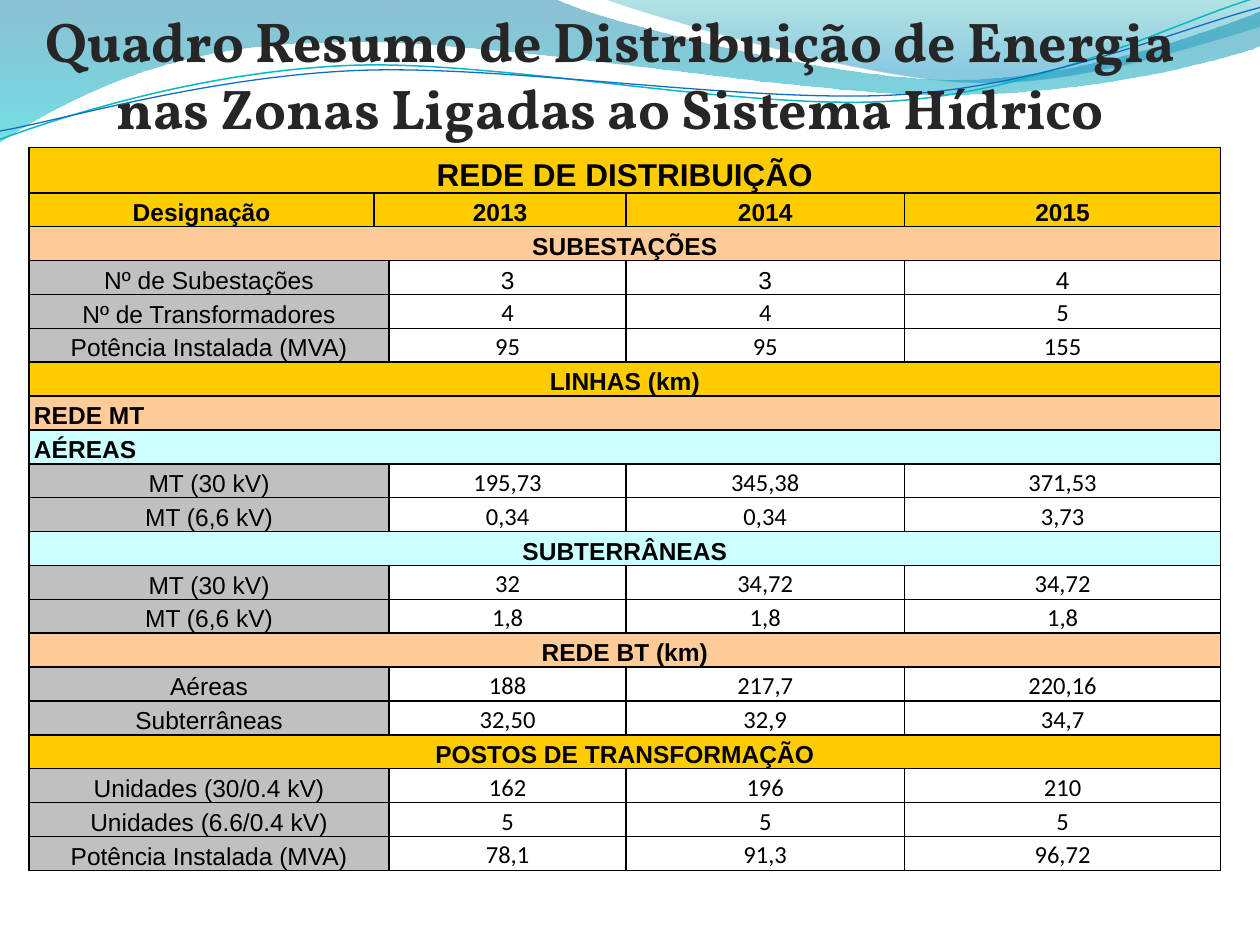
from lxml.etree import SubElement
from pptx import Presentation
from pptx.dml.color import RGBColor
from pptx.enum.text import MSO_ANCHOR, MSO_AUTO_SIZE, PP_ALIGN
from pptx.oxml.ns import qn
from pptx.util import Inches, Pt

WIDE, HIGH = 10, 7.5
HEX = {
    "gold": "FFCC00", "peach": "FFCC99", "aqua": "CCFFFF", "gray": "C0C0C0",
    "white": "FFFFFF", "black": "000000", "ink": "262626",
    "sea": "0074A1", "cyan": "00C6CF", "teal": "00A1A9", "blue": "008BBF",
    "line": "0AB8BF", "deep": "0F6FC6",
}
TITLE = "Quadro Resumo de Distribuição de Energia nas Zonas Ligadas ao Sistema Hídrico"
ROWS = [
    ("gold", "REDE DE DISTRIBUIÇÃO"),
    ("head", "Designação", "2013", "2014", "2015"),
    ("peach", "SUBESTAÇÕES"),
    ("data", "Nº de Subestações", "3", "3", "4"),
    ("data", "Nº de Transformadores", "4", "4", "5"),
    ("data", "Potência Instalada (MVA)", "95", "95", "155"),
    ("gold", "LINHAS (km)"),
    ("peach", "REDE MT"),
    ("aqua", "AÉREAS"),
    ("data", "MT (30 kV)", "195,73", "345,38", "371,53"),
    ("data", "MT (6,6 kV)", "0,34", "0,34", "3,73"),
    ("aqua", "SUBTERRÂNEAS"),
    ("data", "MT (30 kV)", "32", "34,72", "34,72"),
    ("data", "MT (6,6 kV)", "1,8", "1,8", "1,8"),
    ("peach", "REDE BT (km)"),
    ("data", "Aéreas", "188", "217,7", "220,16"),
    ("data", "Subterrâneas", "32,50", "32,9", "34,7"),
    ("gold", "POSTOS DE TRANSFORMAÇÃO"),
    ("data", "Unidades (30/0.4 kV)", "162", "196", "210"),
    ("data", "Unidades (6.6/0.4 kV)", "5", "5", "5"),
    ("data", "Potência Instalada (MVA)", "78,1", "91,3", "96,72"),
]
LEFT = ("REDE MT", "AÉREAS")
COLS = [2.74, 0.11, 1.88, 2.21, 2.51]
BOX = (0.23, 1.17, sum(COLS), 5.74)
TOP = 0.36
SPACE = {"Arial": 1.15, "Calibri": 1.13}
BANDS = [
    ([(0, -0.01), (4.4, -0.01),
      (4.76, 0.17, 6.64, 0.63, 7.58, 0.63), (8.53, 0.63, 9.58, 0.26, 10, 0.09),
      (10.01, 0.36),
      (9.83, 0.44, 8.7, 0.76, 7.46, 0.75), (6.22, 0.75, 3.82, 0.28, 2.57, 0.34),
      (1.29, 0.35, 0.46, 0.83, -0.01, 1.13)],
     [(0, "sea", 45), (1, "cyan", 55)]),
    ([(4.79, -0.01),
      (5.09, 0.11, 6.82, 0.62, 7.69, 0.65), (8.56, 0.69, 9.61, 0.32, 10, 0.21),
      (10, 0)],
     [(0, "teal", 30), (0.8, "blue", 45)]),
]
WAVES = [
    ([(-0.01, 1.11), (0.48, 0.93, 1.58, 0.57, 2.77, 0.52),
      (3.95, 0.47, 5.93, 0.89, 7.13, 0.8), (8.33, 0.71, 9.38, 0.15, 9.98, -0.02)],
     "line", 0.85),
    ([(0, 1.04), (0.47, 0.96, 1.64, 0.61, 2.83, 0.56),
      (4.03, 0.51, 5.97, 0.83, 7.17, 0.75), (8.36, 0.67, 9.41, 0.21, 10, 0.06)],
     "deep", 0.75),
]
UNIT = 100


def draw(slide, path, close):
    dots = [(round(part[i] * UNIT), round(part[i + 1] * UNIT))
            for part in path for i in range(0, len(part), 2)]
    pen = slide.shapes.build_freeform(*dots[0], scale=Inches(1) / UNIT)
    pen.add_line_segments(dots[1:], close=close)
    shape = pen.convert_to_shape()
    shape.shadow.inherit = False
    lines = iter(list(shape.element.iter(qn("a:lnTo"))))
    for part in path[1:]:
        first = next(lines)
        if len(part) == 6:
            curve = first.makeelement(qn("a:cubicBezTo"))
            first.addprevious(curve)
            for line in (first, next(lines), next(lines)):
                curve.append(line[0])
                line.getparent().remove(line)
    return shape


def tint(name):
    return RGBColor.from_string(HEX[name])


def shade(shape, stops):
    shape.line.fill.background()
    shape.fill.gradient()
    shape.fill.gradient_angle = 270
    for stop, (place, name, solid) in zip(shape.fill.gradient_stops, stops):
        stop.position = place
        stop.color.rgb = tint(name)
    tones = shape.element.spPr.iter(qn("a:srgbClr"))
    for tone, (place, name, solid) in zip(tones, stops):
        SubElement(tone, qn("a:alpha"), val=str(solid * 1000))


def write(para, text, font, size, color, bold):
    run = para.add_run()
    run.text = text
    run.font.name = font
    run.font.size = Pt(size)
    run.font.bold = bold
    run.font.color.rgb = tint(color)


def frame(cell):
    props = cell._tc.get_or_add_tcPr()
    for side in ("lnL", "lnR", "lnT", "lnB"):
        edge = SubElement(props, qn("a:" + side), w=str(Pt(1)))
        fill = SubElement(edge, qn("a:solidFill"))
        SubElement(fill, qn("a:srgbClr"), val=HEX["black"])


def fill(cell, text, color, font="Arial", size=14, bold=False):
    cell.fill.solid()
    cell.fill.fore_color.rgb = tint(color)
    cell.vertical_anchor = MSO_ANCHOR.BOTTOM
    cell.margin_left = cell.margin_right = Inches(0.04)
    cell.margin_top = cell.margin_bottom = 0
    para = cell.text_frame.paragraphs[0]
    para.alignment = PP_ALIGN.LEFT if text in LEFT else PP_ALIGN.CENTER
    para.line_spacing = SPACE[font]
    write(para, text, font, size, "black", bold)


def tabulate(slide):
    grid = slide.shapes.add_table(len(ROWS), len(COLS), *map(Inches, BOX)).table
    for col, width in zip(grid.columns, COLS):
        col.width = Inches(width)
    for r, (kind, *texts) in enumerate(ROWS):
        grid.rows[r].height = Inches(TOP if r == 0 else (BOX[3] - TOP) / (len(ROWS) - 1))
        cells = [grid.cell(r, c) for c in range(len(COLS))]
        for cell in cells:
            frame(cell)
        if kind == "head":
            cells[1].merge(cells[2])
            for c, text in zip((0, 1, 3, 4), texts):
                fill(cells[c], text, "gold", bold=True)
        elif kind == "data":
            cells[0].merge(cells[1])
            fill(cells[0], texts[0], "gray")
            font = "Arial" if r == 3 else "Calibri"
            for cell, text in zip(cells[2:], texts[1:]):
                fill(cell, text, "white", font)
        else:
            cells[0].merge(cells[-1])
            fill(cells[0], texts[0], kind, size=18 if r == 0 else 14, bold=True)


def main():
    deck = Presentation()
    deck.slide_width, deck.slide_height = Inches(WIDE), Inches(HIGH)
    slide = deck.slides.add_slide(deck.slide_layouts[5])
    for path, stops in BANDS:
        shade(draw(slide, path, True), stops)
    for path, color, width in WAVES:
        wave = draw(slide, path, False)
        wave.fill.background()
        wave.line.color.rgb = tint(color)
        wave.line.width = Pt(width)

    title = slide.shapes.title
    title.left = title.top = 0
    title.width, title.height = Inches(9.69), Inches(2.32)
    body = title.text_frame
    body.word_wrap = True
    body.auto_size = MSO_AUTO_SIZE.NONE
    body.vertical_anchor = MSO_ANCHOR.TOP
    body.paragraphs[0].alignment = PP_ALIGN.CENTER
    write(body.paragraphs[0], TITLE, "Vollkorn", 32, "ink", True)
    title.element.getparent().append(title.element)
    tabulate(slide)
    deck.save("out.pptx")


if __name__ == "__main__":
    main()
